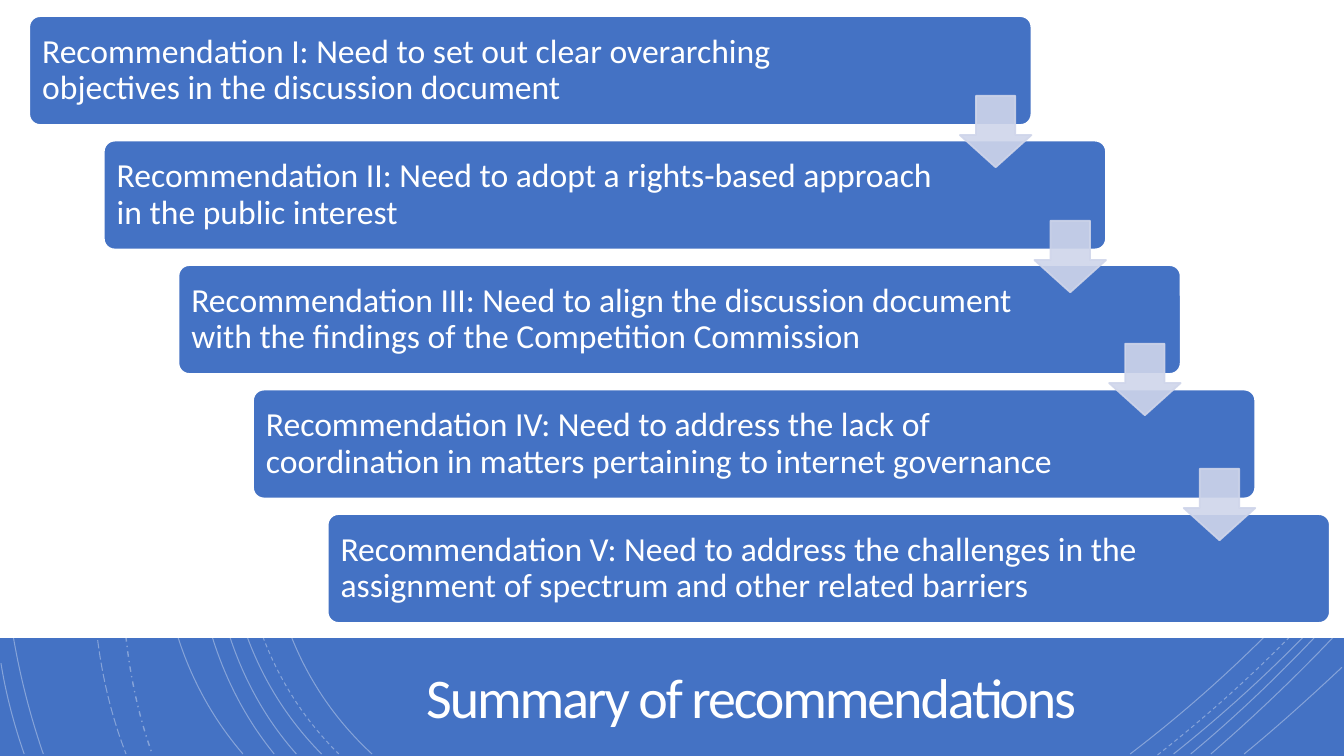
"""Build the summary slide: five cascading recommendations above a title band."""
from lxml import etree
from pptx import Presentation
from pptx.dml.color import RGBColor
from pptx.enum.dml import MSO_LINE
from pptx.enum.shapes import MSO_SHAPE
from pptx.enum.text import MSO_ANCHOR, PP_ALIGN
from pptx.oxml.ns import qn
from pptx.util import Inches, Pt

RECTANGLE = MSO_SHAPE.RECTANGLE
ROUNDED = MSO_SHAPE.ROUNDED_RECTANGLE
DOWN_ARROW = MSO_SHAPE.DOWN_ARROW
SOLID, DASH = MSO_LINE.SOLID, MSO_LINE.DASH
DASH_DOT, LONG_DASH = MSO_LINE.DASH_DOT, MSO_LINE.LONG_DASH
MIDDLE = MSO_ANCHOR.MIDDLE
LEFT, CENTER = PP_ALIGN.LEFT, PP_ALIGN.CENTER

COLORS = {"blue": "4472C4", "white": "FFFFFF", "arrow": "CFD5EA"}
FONT = "Calibri"
WIDTH, HEIGHT = 13.33, 7.5
STEP_X, STEP_Y = 0.74, 4.94 / 4
ARROW_TOPS = [0.95, 2.19, 3.41, 4.65]

RECOMMENDATIONS = [
    "Recommendation I: Need to set out clear overarching objectives in the discussion document",
    "Recommendation II: Need to adopt a rights-based approach in the public interest",
    "Recommendation III: Need to align the discussion document with the findings of the "
    "Competition Commission",
    "Recommendation IV: Need to address the lack of coordination in matters pertaining to "
    "internet governance",
    "Recommendation V: Need to address the challenges in the assignment of spectrum and "
    "other related barriers",
]

BAND_CURVES = [
    ([(5.65, 0), (3.15, 1.15), (1.43, 5.4), (3.69, 7.48)], SOLID, 0.75),
    ([(11.21, 7.48), (11.97, 6.9), (12.69, 6.22), (13.31, 5.48)], SOLID, 0.75),
    ([(5.25, 0), (2.85, 1.25), (1.23, 5.37), (3.36, 7.48)], DASH, 0.75),
    ([(11.48, 7.49), (12.13, 6.98), (12.75, 6.4), (13.3, 5.77)], DASH, 0.75),
    ([(5.06, 0), (2.7, 1.27), (1.1, 5.37), (3.19, 7.48)], SOLID, 0.75),
    ([(11.64, 7.48), (12.23, 7.01), (12.8, 6.48), (13.31, 5.91)], SOLID, 0.75),
    ([(4.64, 0), (2.44, 1.33), (1.1, 5.41), (2.94, 7.48)], SOLID, 0.75),
    ([(11.81, 7.48), (12.34, 7.04), (12.84, 6.55), (13.31, 6.03)], SOLID, 0.75),
    ([(4.51, 0), (2.31, 1.38), (0.97, 5.33), (2.72, 7.48)], SOLID, 0.75),
    ([(12.01, 7.48), (12.46, 7.09), (12.9, 6.67), (13.31, 6.23)], SOLID, 0.75),
    ([(4.27, 0), (2.17, 1.47), (0.53, 5.29), (2.41, 7.48)], SOLID, 0.75),
    ([(12.34, 7.48), (12.67, 7.21), (12.99, 6.92), (13.31, 6.62)], SOLID, 0.75),
    ([(3.63, 0), (1.76, 1.66), (0.65, 5.09), (1.51, 7.48)], DASH_DOT, 1),
    ([(3.51, 0), (1.57, 1.69), (0.29, 4.99), (1.25, 7.48)], LONG_DASH, 0.75),
    ([(2.17, 0), (0.11, 1.85), (-0.46, 4.9), (0.43, 7.48)], SOLID, 0.75),
    ([(0.01, 6.58), (0.06, 6.89), (0.14, 7.19), (0.24, 7.48)], SOLID, 0.75),
]


def write_text(frame, text, size=24, color="white", align=LEFT, line_spacing=0.9,
               inset=0.1, tracking=None):
    """Write one formatted paragraph into a text frame."""
    frame.word_wrap = True
    frame.vertical_anchor = MIDDLE
    frame.margin_left = frame.margin_right = Inches(inset)
    frame.margin_top = frame.margin_bottom = Inches(inset)
    paragraph = frame.paragraphs[0]
    paragraph.alignment = align
    paragraph.line_spacing = line_spacing
    run = paragraph.add_run()
    run.text = text
    run.font.name = FONT
    run.font.size = Pt(size)
    run.font.color.rgb = RGBColor.from_string(COLORS[color])
    if tracking is not None:
        run._r.get_or_add_rPr().set("spc", str(int(tracking * 100)))


class SlideBuilder:
    """Hold the current slide and its drawing style."""

    def __init__(self, slide):
        """Keep the slide to draw on."""
        self.slide = slide

    def paint(self, fill_format, color, opacity=100):
        """Apply a solid colour with an optional opacity."""
        fill_format.solid()
        fill_format.fore_color.rgb = RGBColor.from_string(COLORS[color])
        if opacity < 100:
            solid_fill = fill_format._xPr.find(qn("a:solidFill"))
            alpha = etree.SubElement(solid_fill[0], qn("a:alpha"))
            alpha.set("val", str(opacity * 1000))

    def outline(self, shape, color, width, dash=SOLID, opacity=100):
        """Give a shape its line."""
        self.paint(shape.line.fill, color, opacity)
        shape.line.width = Pt(width)
        shape.line.dash_style = dash

    def shape(self, kind, left, top, width, height, fill, line=None, opacity=100,
              adjustments=()):
        """Add a filled preset shape."""
        shape = self.slide.shapes.add_shape(
            kind, Inches(left), Inches(top), Inches(width), Inches(height))
        shape.shadow.inherit = False
        self.paint(shape.fill, fill, opacity)
        if line:
            self.outline(shape, line, 1.25, opacity=opacity)
        else:
            shape.line.fill.background()
        for index, value in enumerate(adjustments):
            shape.adjustments[index] = value

    def curve(self, points, dash, width):
        """Add a thin translucent cubic curve through its control points."""
        start, *rest = [(Inches(x), Inches(y)) for x, y in points]
        freeform = self.slide.shapes.build_freeform(*start)
        freeform.add_line_segments(rest, close=False)
        shape = freeform.convert_to_shape()
        outline_path = next(shape._element.iter(qn("a:path")))
        cubic = etree.SubElement(outline_path, qn("a:cubicBezTo"))
        for segment in outline_path.findall(qn("a:lnTo")):
            cubic.append(segment[0])
            outline_path.remove(segment)
        shape.shadow.inherit = False
        shape.fill.background()
        self.outline(shape, "white", width, dash, 35)

    def text(self, left, top, width, height, text, **style):
        """Add a text box."""
        box = self.slide.shapes.add_textbox(
            Inches(left), Inches(top), Inches(width), Inches(height))
        write_text(box.text_frame, text, **style)


def main():
    """Build and save the slide."""
    presentation = Presentation()
    presentation.slide_width = Inches(WIDTH)
    presentation.slide_height = Inches(HEIGHT)
    builder = SlideBuilder(presentation.slides.add_slide(presentation.slide_layouts[6]))

    builder.shape(RECTANGLE, 0, 0, WIDTH, HEIGHT, "blue")
    for points, dash, width in BAND_CURVES:
        builder.curve(points, dash, width)
    builder.shape(RECTANGLE, 0, 0, WIDTH, 6.33, "white")
    builder.text(3.8, 6.45, 7.3, 1.02, "Summary of recommendations", size=40,
                 align=CENTER, line_spacing=0.85, inset=0.25, tracking=-1.5)

    for index, recommendation in enumerate(RECOMMENDATIONS):
        left, top = 0.29 + index * STEP_X, 0.16 + index * STEP_Y
        builder.shape(ROUNDED, left, top, 9.94, 1.08, "blue", "white", adjustments=[0.1])
        text_width = 8.64 if index == 0 else 8.43
        builder.text(left + 0.03, top + 0.03, text_width, 1.02, recommendation)

    for index, top in enumerate(ARROW_TOPS):
        builder.shape(DOWN_ARROW, 9.52 + index * STEP_X, top, 0.71, 0.71,
                      "arrow", "arrow", opacity=90, adjustments=[0.55, 0.45])

    presentation.save("out.pptx")


if __name__ == "__main__":
    main()
